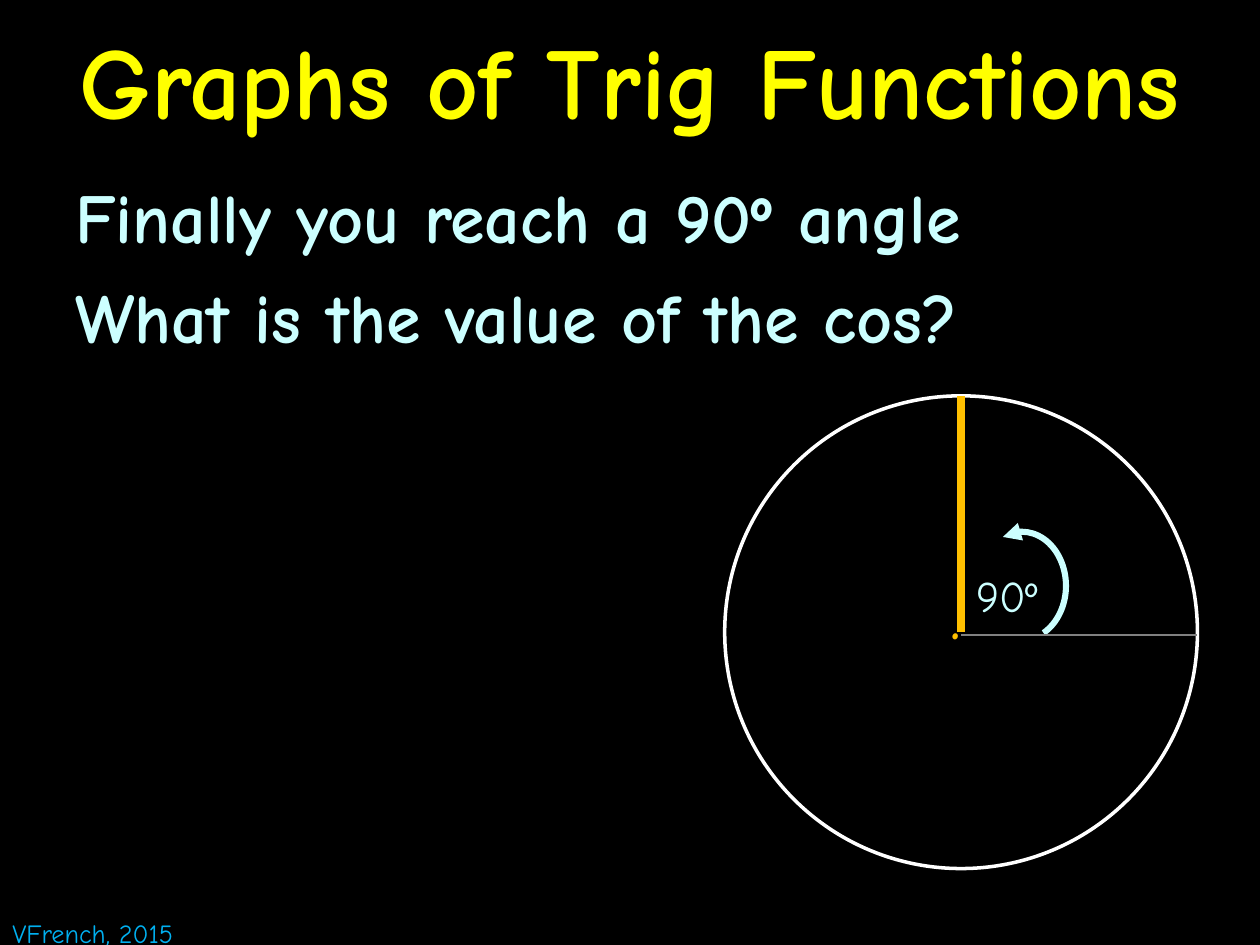
from lxml.etree import SubElement
from pptx import Presentation
from pptx.dml.color import RGBColor
from pptx.enum.shapes import MSO_CONNECTOR, MSO_SHAPE
from pptx.enum.text import MSO_ANCHOR as Anchor, MSO_AUTO_SIZE as AutoSize, PP_ALIGN as Align
from pptx.oxml.ns import qn
from pptx.util import Cm, Pt

FONT = "Comic Neue"
BLACK, WHITE, GREY = "000000", "FFFFFF", "808080"
YELLOW, ORANGE, ICE, BLUE = "FFFF00", "FFC000", "CCFFFF", "00B0F0"

CIRCLE_LEFT, CIRCLE_TOP, DIAMETER = 14.61, 7.98, 9.53
CENTRE_X = CIRCLE_LEFT + DIAMETER / 2
CENTRE_Y = CIRCLE_TOP + DIAMETER / 2
AXIS_Y = 12.8


def colour(hex_text):
    return RGBColor.from_string(hex_text)


def write_text(shape, lines, size, text_colour, bold=False, align=Align.LEFT, before=0, **frame_format):
    """Fill a shape with paragraphs; frame_format holds text frame attributes."""
    frame = shape.text_frame
    for name, value in frame_format.items():
        setattr(frame, name, value)
    frame.text = "\n".join(lines)
    for paragraph in frame.paragraphs:
        paragraph.alignment = align
        paragraph.space_before = Pt(before)
        font = paragraph.runs[0].font
        for name, value in {"name": FONT, "size": Pt(size), "bold": bold}.items():
            setattr(font, name, value)
        font.color.rgb = colour(text_colour)


def add_text(slide, box, lines, size, text_colour, **text_format):
    shape = slide.shapes.add_textbox(*map(Cm, box))
    write_text(shape, lines, size, text_colour, **text_format)


def style_line(line, line_colour, width):
    line.color.rgb = colour(line_colour)
    line.width = Pt(width)


def add_outline(slide, kind, box, line_colour, width):
    shape = slide.shapes.add_shape(kind, *map(Cm, box))
    shape.shadow.inherit = False
    shape.fill.background()
    style_line(shape.line, line_colour, width)
    return shape


def add_line(slide, ends, line_colour, width):
    connector = slide.shapes.add_connector(MSO_CONNECTOR.STRAIGHT, *map(Cm, ends))
    style_line(connector.line, line_colour, width)
    SubElement(connector.element.spPr, qn("a:effectLst"))


def add_angle_arrow(slide):
    arc = add_outline(slide, MSO_SHAPE.ARC, (19.71, 10.72, 1.78, 2.18), ICE, 3.5)
    arc.adjustments[0] = 149.29
    arc.adjustments[1] = 39.2
    SubElement(arc.line._get_or_add_ln(), qn("a:headEnd"), type="triangle")


def add_title(slide):
    title = slide.shapes.title
    box = {"left": 0, "top": 0, "width": 25.4, "height": 3.18}
    for name, value in box.items():
        setattr(title, name, Cm(value))
    write_text(title, ["Graphs of Trig Functions"], 58, YELLOW, bold=True, align=Align.CENTER,
               vertical_anchor=Anchor.MIDDLE, word_wrap=True, auto_size=AutoSize.NONE)


def add_circle_diagram(slide):
    add_outline(slide, MSO_SHAPE.OVAL, (CIRCLE_LEFT, CIRCLE_TOP, DIAMETER, DIAMETER), WHITE, 2)
    add_text(slide, (18.92, 11.35, 0.86, 1.96), ["."], 40, ORANGE, word_wrap=False)
    add_text(slide, (19.43, 11.35, 2.36, 1.32), ["90º"], 25, ICE, word_wrap=True)
    add_angle_arrow(slide)
    add_line(slide, (CENTRE_X, CENTRE_Y, CENTRE_X, CIRCLE_TOP), ORANGE, 5)
    add_line(slide, (CENTRE_X, AXIS_Y, CIRCLE_LEFT + DIAMETER, AXIS_Y), GREY, 1)


def main():
    presentation = Presentation()
    presentation.slide_width, presentation.slide_height = Cm(25.4), Cm(19.05)
    slide = presentation.slides.add_slide(presentation.slide_layouts[5])
    slide.background.fill.solid()
    slide.background.fill.fore_color.rgb = colour(BLACK)

    add_text(slide, (1.27, 3.38, 22.86, 15.67),
             ["Finally you reach a 90º angle", "What is the value of the cos?"],
             40, ICE, bold=True, before=9, word_wrap=True)
    add_title(slide)
    add_text(slide, (0, 18.36, 4.29, 0.89), ["VFrench, 2015"], 15, BLUE, word_wrap=False)
    add_circle_diagram(slide)
    presentation.save("out.pptx")


if __name__ == "__main__":
    main()
